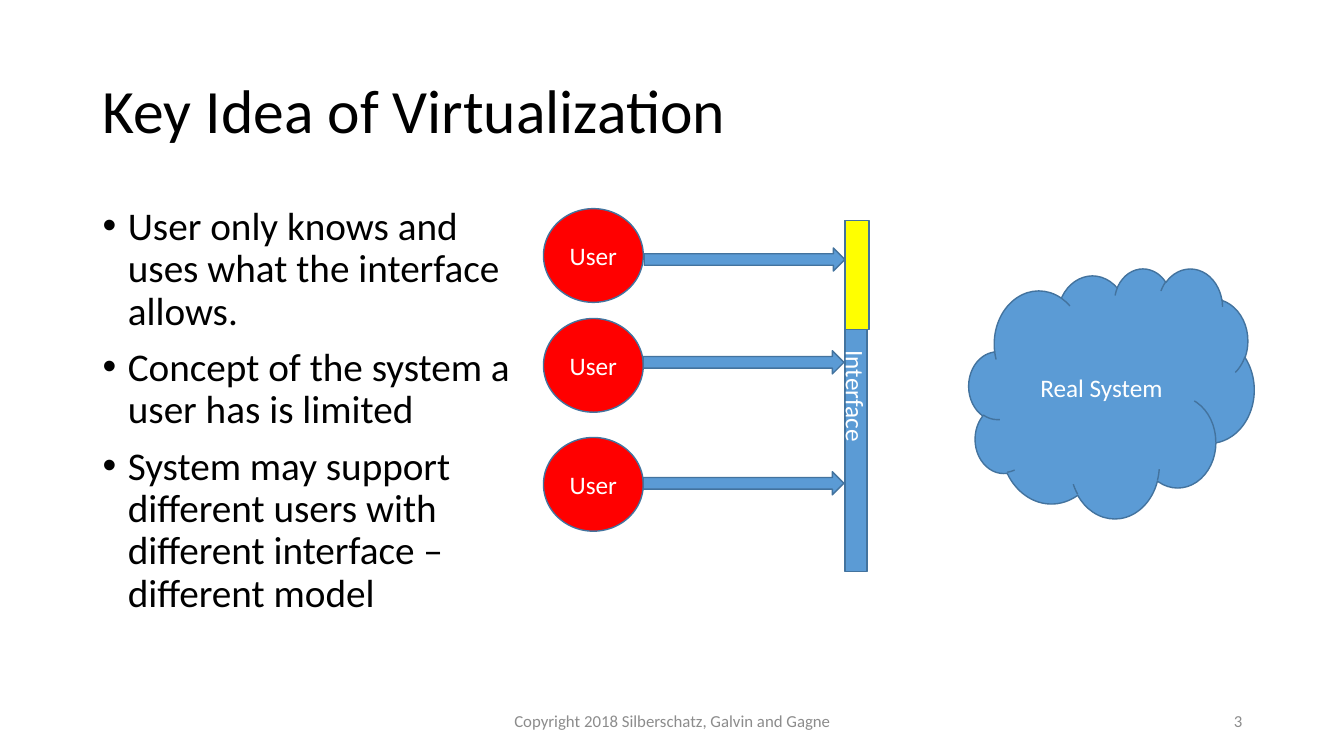
from lxml.etree import SubElement
from pptx import Presentation
from pptx.dml.color import RGBColor
from pptx.enum.shapes import MSO_SHAPE as Preset
from pptx.enum.text import MSO_ANCHOR as Anchor, PP_ALIGN as Align
from pptx.oxml.ns import qn
from pptx.util import Inches, Pt

FONT = "Calibri"
BLACK = RGBColor(0x00, 0x00, 0x00)
WHITE = RGBColor(0xFF, 0xFF, 0xFF)
GRAY = RGBColor(0x8C, 0x8C, 0x8C)
BLUE = RGBColor(0x5B, 0x9B, 0xD5)
DARK_BLUE = RGBColor(0x43, 0x73, 0x9E)
RED = RGBColor(0xFF, 0x00, 0x00)
YELLOW = RGBColor(0xFF, 0xFF, 0x00)

BULLETS = [
    "User only knows and uses what the interface allows.",
    "Concept of the system a user has is limited",
    "System may support different users with different interface – different model",
]
USER_TOPS = [2.07, 3.16, 4.34]
ARROW_PLACES = [(6.39, 2.46), (6.38, 3.48), (6.38, 4.68)]


def add_run(paragraph, text, size, color):
    """Append a run of text in the slide font."""
    run = paragraph.add_run()
    run.text = text
    run.font.name = FONT
    run.font.size = Pt(size)
    run.font.color.rgb = color


def add_text_box(slide, box, anchor=Anchor.MIDDLE):
    """Add an empty wrapping text box and return its text frame."""
    frame = slide.shapes.add_textbox(*map(Inches, box)).text_frame
    frame.word_wrap = True
    frame.vertical_anchor = anchor
    return frame


def add_line(slide, box, text, size, color, align=Align.LEFT, spacing=1.0):
    """Add a text box that holds a single paragraph."""
    paragraph = add_text_box(slide, box).paragraphs[0]
    paragraph.alignment = align
    paragraph.line_spacing = spacing
    add_run(paragraph, text, size, color)


def add_bullets(slide, box, items):
    """Add a text box with one bulleted paragraph per item."""
    frame = add_text_box(slide, box, Anchor.TOP)
    for index, item in enumerate(items):
        paragraph = frame.add_paragraph() if index else frame.paragraphs[0]
        paragraph.line_spacing = 0.9
        paragraph.space_before = Pt(10)
        properties = paragraph._p.get_or_add_pPr()
        properties.set("marL", str(Inches(0.25)))
        properties.set("indent", str(Inches(-0.25)))
        SubElement(properties, qn("a:buFont")).set("typeface", "Arial")
        SubElement(properties, qn("a:buChar")).set("char", "•")
        add_run(paragraph, item, 28, BLACK)


def add_figure(slide, preset, box, fill, label="", vertical=False):
    """Add an outlined preset shape with an optional centred label."""
    shape = slide.shapes.add_shape(preset, *map(Inches, box))
    shape.shadow.inherit = False
    shape.fill.solid()
    shape.fill.fore_color.rgb = fill
    shape.line.color.rgb = DARK_BLUE
    shape.line.width = Pt(1)
    if label:
        frame = shape.text_frame
        frame.vertical_anchor = Anchor.MIDDLE
        if vertical:
            frame._txBody.bodyPr.set("vert", "vert")
        paragraph = frame.paragraphs[0]
        paragraph.alignment = Align.CENTER
        add_run(paragraph, label, 18, WHITE)


def add_diagram(slide):
    """Draw the users, their arrows, the interface and the real system."""
    add_figure(slide, Preset.RECTANGLE, (8.38, 2.19, 0.22, 3.48), BLUE, "Interface", True)
    add_figure(slide, Preset.CLOUD, (9.61, 2.66, 2.83, 2.48), BLUE, "Real System")
    for top in USER_TOPS:
        add_figure(slide, Preset.OVAL, (5.39, top, 0.99, 0.93), RED, "User")
    for left, top in ARROW_PLACES:
        add_figure(slide, Preset.RIGHT_ARROW, (left, top, 1.99, 0.23), BLUE)
    add_figure(slide, Preset.RECTANGLE, (8.38, 2.19, 0.24, 1.08), YELLOW)


def main():
    """Build the slide and save it."""
    presentation = Presentation()
    presentation.slide_width = Inches(13.33)
    presentation.slide_height = Inches(7.5)
    slide = presentation.slides.add_slide(presentation.slide_layouts[6])
    add_line(slide, (0.92, 0.4, 11.5, 1.45), "Key Idea of Virtualization", 44, BLACK, spacing=0.9)
    add_bullets(slide, (0.92, 2, 4.25, 4.76), BULLETS)
    add_line(slide, (4.42, 6.95, 4.5, 0.4), "Copyright 2018 Silberschatz, Galvin and Gagne",
             12, GRAY, Align.CENTER)
    add_diagram(slide)
    add_line(slide, (9.42, 6.95, 3, 0.4), "3", 12, GRAY, Align.RIGHT)
    presentation.save("out.pptx")


if __name__ == "__main__":
    main()
